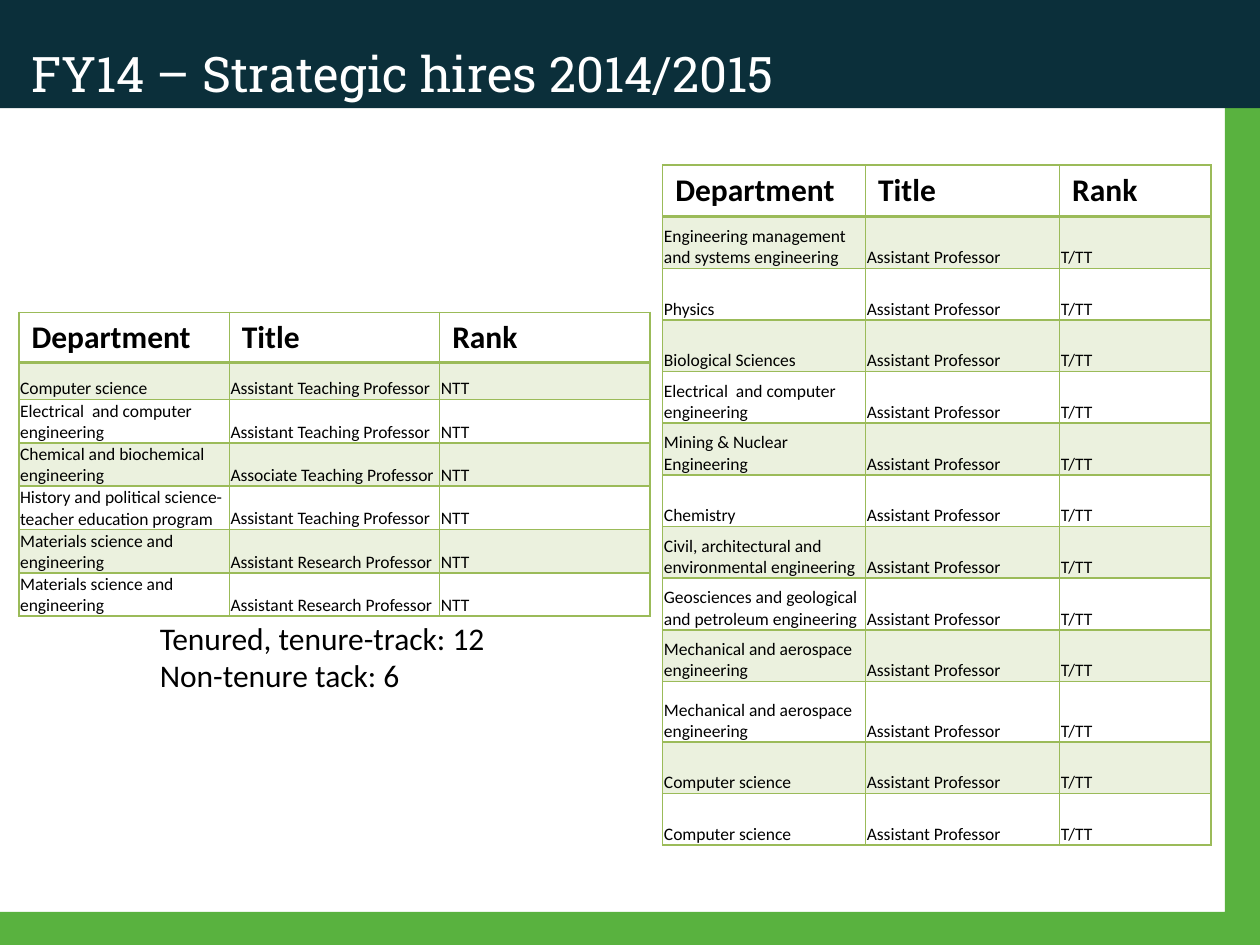
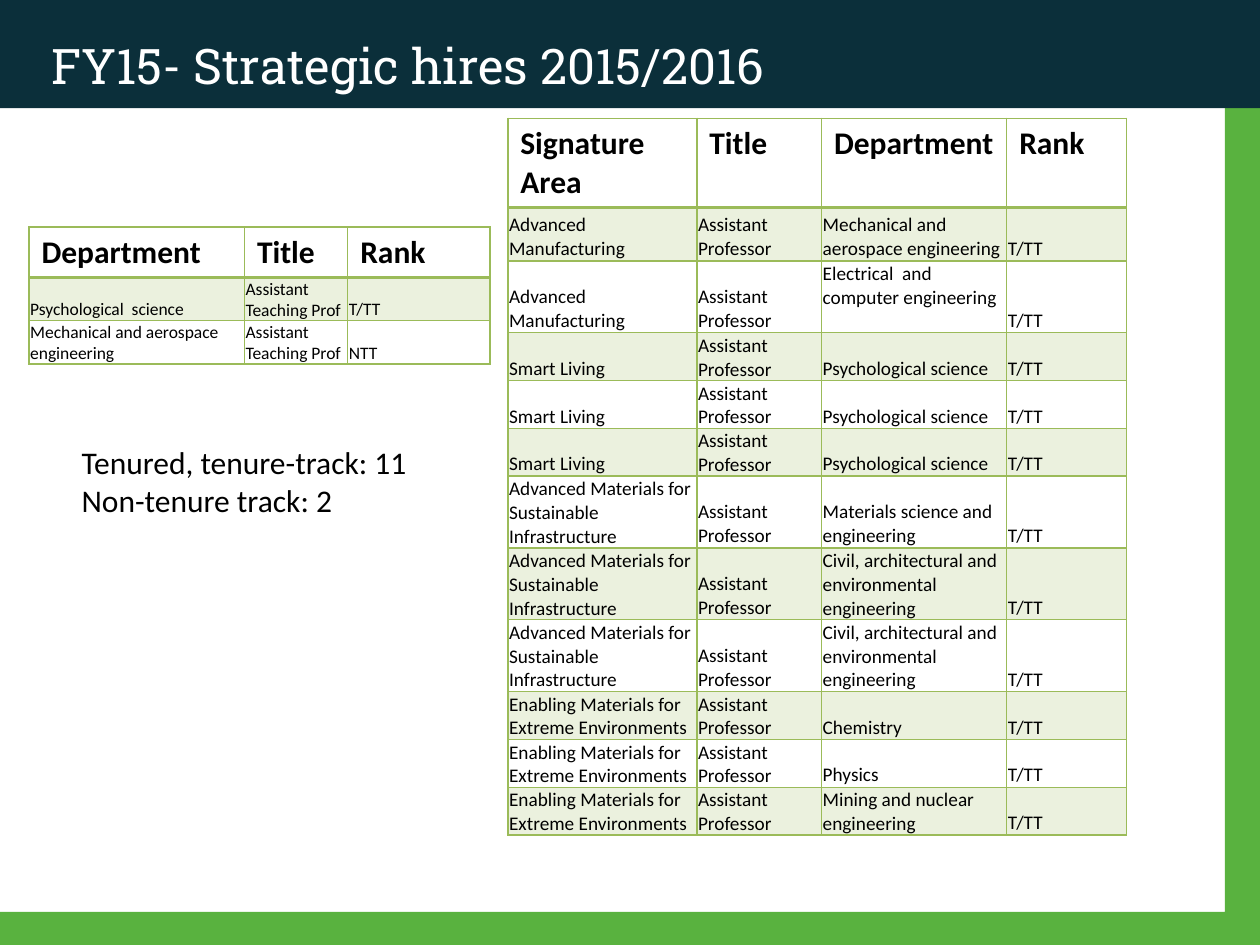
"""Build two slides that list the strategic hires of each fiscal year."""
from dataclasses import dataclass

from lxml import etree
from pptx import Presentation
from pptx.dml.color import RGBColor
from pptx.enum.shapes import MSO_SHAPE
from pptx.enum.text import MSO_ANCHOR
from pptx.oxml.ns import qn
from pptx.util import Inches, Pt

BAND = MSO_SHAPE.RECTANGLE
CORNER = MSO_SHAPE.CORNER
TOP = MSO_ANCHOR.TOP
BOTTOM = MSO_ANCHOR.BOTTOM


@dataclass(frozen=True)
class Theme:
    navy: str = "0B2F3A"
    green: str = "59B23F"
    rule: str = "9BBB59"
    stripe: str = "EBF1DE"
    ink: str = "000000"
    paper: str = "FFFFFF"
    title_font: str = "Roboto Slab"
    body_font: str = "Calibri"
    title_size: int = 28
    body_size: int = 18
    thin: int = 1
    thick: int = 2


THEME = Theme()
SLIDE_W, SLIDE_H = Inches(10), Inches(7.5)
COLUMN = SLIDE_W / 100
BAND_ROWS = 8.6
FRAME_SHARES = (0.035, 0.037)
CELL_INSET = Inches(0.01)

PROFESSOR = "Assistant Professor"
TEACHING = "Assistant Teaching Professor"
RESEARCH = "Assistant Research Professor"
TEACHING_SHORT = "Assistant Teaching Prof"
TRACK, NON_TRACK = "T/TT", "NTT"
MANUFACTURING = "Advanced Manufacturing"
LIVING = "Smart Living"
INFRASTRUCTURE = "Advanced Materials for Sustainable Infrastructure"
EXTREME = "Enabling Materials for Extreme Environments"
ELECTRICAL = "Electrical  and computer engineering"
AEROSPACE = "Mechanical and aerospace engineering"
CIVIL = "Civil, architectural and environmental engineering"
MATERIALS = "Materials science and engineering"
COMPUTING = "Computer science"
PSYCHOLOGY = "Psychological science"

HEADINGS = ("Department", "Title", "Rank")

TRACK_DEPARTMENTS_2014 = [
    "Engineering management and systems engineering",
    "Physics",
    "Biological Sciences",
    ELECTRICAL,
    "Mining & Nuclear Engineering",
    "Chemistry",
    CIVIL,
    "Geosciences and geological and petroleum engineering",
    AEROSPACE,
    AEROSPACE,
    COMPUTING,
    COMPUTING,
]
NON_TRACK_2014 = [
    (COMPUTING, TEACHING),
    (ELECTRICAL, TEACHING),
    ("Chemical and biochemical engineering", "Associate Teaching Professor"),
    ("History and political science- teacher education program", TEACHING),
    (MATERIALS, RESEARCH),
    (MATERIALS, RESEARCH),
]
TEACHING_2015 = [
    ("Psychological  science", TEACHING_SHORT, TRACK),
    (AEROSPACE, TEACHING_SHORT, NON_TRACK),
]
SIGNATURE_2015 = [
    (MANUFACTURING, AEROSPACE),
    (MANUFACTURING, ELECTRICAL),
    (LIVING, PSYCHOLOGY),
    (LIVING, PSYCHOLOGY),
    (LIVING, PSYCHOLOGY),
    (INFRASTRUCTURE, MATERIALS),
    (INFRASTRUCTURE, CIVIL),
    (INFRASTRUCTURE, CIVIL),
    (EXTREME, "Chemistry"),
    (EXTREME, "Physics"),
    (EXTREME, "Mining and nuclear engineering"),
]

YEARS = [
    {
        "title": ("FY14 – Strategic hires 2014/2015", (1.5, 3, 90.2, 5.7)),
        "totals": (["Tenured, tenure-track: 12", "Non-tenure tack: 6"],
                   (11.7, 48.6, 38, 7.1)),
        "rosters": [
            {"at": (52.6, 13.1), "columns": (16.1, 15.4, 12), "size": 10,
             "heights": [4.1] * 10 + [4.8] + [4.1] * 2,
             "headings": HEADINGS,
             "hires": [(d, PROFESSOR, TRACK) for d in TRACK_DEPARTMENTS_2014]},
            {"at": (1.5, 24.8), "columns": (16.7,) * 3, "size": 10,
             "heights": [4] + [2.9] * 6,
             "headings": HEADINGS,
             "hires": [(d, t, NON_TRACK) for d, t in NON_TRACK_2014]},
        ],
    },
    {
        "title": ("FY15- Strategic hires 2015/2016", (3.1, 2.3, 90, 6.3)),
        "totals": (["Tenured, tenure-track: 11", "Non-tenure track: 2"],
                   (5.5, 34.7, 28.4, 7.1)),
        "rosters": [
            {"at": (2.3, 18), "columns": (17.1, 8.2, 11.3), "size": 10,
             "heights": [4, 3.4, 3.4],
             "headings": HEADINGS, "hires": TEACHING_2015},
            {"at": (40.3, 9.4), "columns": (15, 9.9, 14.7, 9.5), "size": 11,
             "heights": [7.1, 4.2, 5.7] + [3.8] * 3 + [5.7] * 3 + [3.8] * 3,
             "headings": ("Signature Area", "Title", "Department", "Rank"),
             "hires": [(a, PROFESSOR, d, TRACK) for a, d in SIGNATURE_2015],
             "raised": (2, 2)},
        ],
    },
]


def grid(*units):
    return [round(unit * COLUMN) for unit in units]


def rgb(color):
    return RGBColor.from_string(color)


def write(paragraph, text, size, font, color, bold=False):
    run = paragraph.add_run()
    run.text = text
    run.font.size = Pt(size)
    run.font.name = font
    run.font.bold = bold
    run.font.color.rgb = rgb(color)


def add_lines(slide, lines, place, size, font, color):
    frame = slide.shapes.add_textbox(*grid(*place)).text_frame
    frame.word_wrap = True
    for index, line in enumerate(lines):
        paragraph = frame.add_paragraph() if index else frame.paragraphs[0]
        write(paragraph, line, size, font, color)


def add_block(slide, kind, height, color):
    block = slide.shapes.add_shape(kind, 0, 0, SLIDE_W, height)
    block.shadow.inherit = False
    block.fill.solid()
    block.fill.fore_color.rgb = rgb(color)
    block.line.fill.background()
    return block


def add_backdrop(slide):
    frame = add_block(slide, CORNER, SLIDE_H, THEME.green)
    for index, share in enumerate(FRAME_SHARES):
        frame.adjustments[index] = share
    frame._element.spPr.xfrm.set("flipH", "1")
    add_block(slide, BAND, *grid(BAND_ROWS), THEME.navy)


def add_borders(cell, row):
    properties = cell._tc.get_or_add_tcPr()
    widths = {
        "L": THEME.thin,
        "R": THEME.thin,
        "T": THEME.thick if row == 1 else THEME.thin,
        "B": THEME.thick if row == 0 else THEME.thin,
    }
    for side, width in widths.items():
        line = etree.SubElement(properties, qn(f"a:ln{side}"), w=str(Pt(width)))
        fill = etree.SubElement(line, qn("a:solidFill"))
        etree.SubElement(fill, qn("a:srgbClr"), val=THEME.rule)


def fill_cell(cell, text, row, size, anchor):
    add_borders(cell, row)
    if row % 2:
        cell.fill.solid()
        cell.fill.fore_color.rgb = rgb(THEME.stripe)
    else:
        cell.fill.background()
    if row:
        cell.margin_left = cell.margin_right = cell.margin_top = CELL_INSET
        cell.margin_bottom = 0
        cell.vertical_anchor = anchor
    write(cell.text_frame.paragraphs[0], text, size if row else THEME.body_size,
          THEME.body_font, THEME.ink, bold=row == 0)


def add_roster(slide, roster):
    rows = [roster["headings"], *roster["hires"]]
    columns, heights = roster["columns"], roster["heights"]
    place = grid(*roster["at"], sum(columns), sum(heights))
    table = slide.shapes.add_table(len(rows), len(columns), *place).table
    table.first_row = table.horz_banding = False
    for column, width in zip(table.columns, grid(*columns)):
        column.width = width
    for line, height in zip(table.rows, grid(*heights)):
        line.height = height
    for r, values in enumerate(rows):
        for c, text in enumerate(values):
            anchor = TOP if (r, c) == roster.get("raised") else BOTTOM
            fill_cell(table.cell(r, c), text, r, roster["size"], anchor)


def main():
    deck = Presentation()
    deck.slide_width, deck.slide_height = SLIDE_W, SLIDE_H
    for year in YEARS:
        slide = deck.slides.add_slide(deck.slide_layouts[6])
        add_backdrop(slide)
        title, title_place = year["title"]
        add_lines(slide, [title], title_place,
                  THEME.title_size, THEME.title_font, THEME.paper)
        for roster in year["rosters"]:
            add_roster(slide, roster)
        add_lines(slide, *year["totals"],
                  THEME.body_size, THEME.body_font, THEME.ink)
    deck.save("out.pptx")


if __name__ == "__main__":
    main()
